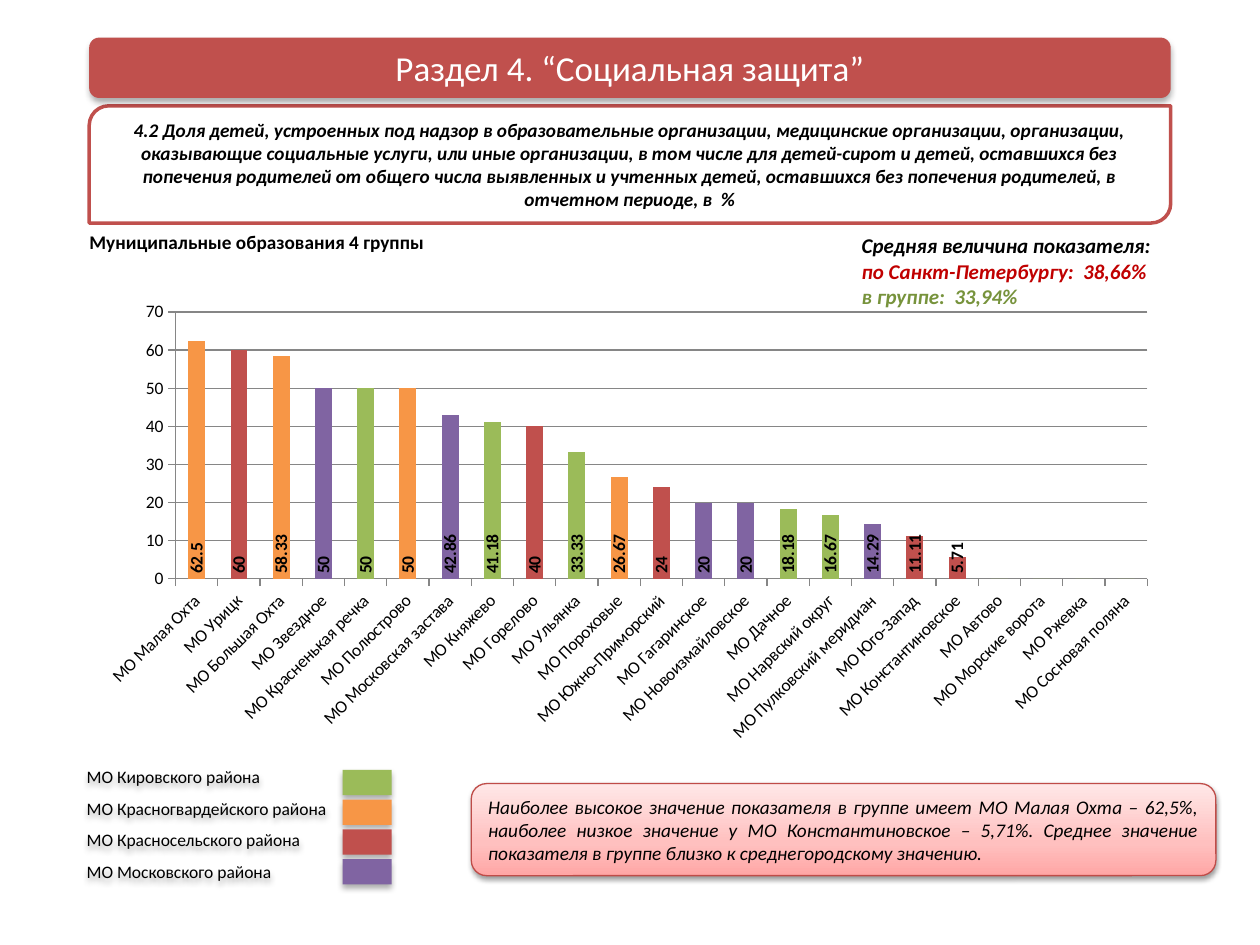
from lxml import etree
from pptx import Presentation
from pptx.chart.data import CategoryChartData
from pptx.dml.color import RGBColor
from pptx.enum import chart as charts, shapes, text
from pptx.oxml import parse_xml
from pptx.oxml.ns import nsdecls, qn
from pptx.util import Pt

BLACK = RGBColor(0, 0, 0)
WHITE = RGBColor(255, 255, 255)
RED = RGBColor(0xC0, 0x50, 0x4D)
GREEN = RGBColor(0x9B, 0xBB, 0x59)
ORANGE = RGBColor(0xF7, 0x96, 0x46)
PURPLE = RGBColor(0x80, 0x64, 0xA2)
EDGE = RGBColor(0xBF, 0x4C, 0x48)
CITY = RGBColor(0xC0, 0, 0)
GROUP = RGBColor(0x77, 0x93, 0x3C)
GREY = RGBColor(0x86, 0x86, 0x86)
PINKS = [(0, "FFA6A5"), (35, "FFC0BF"), (100, "FFE7E7")]

AREAS = [("МО Кировского района", GREEN), ("МО Красногвардейского района", ORANGE),
         ("МО Красносельского района", RED), ("МО Московского района", PURPLE)]
ROWS = [
    ("МО Малая Охта", 62.5, ORANGE), ("МО Урицк", 60, RED),
    ("МО Большая Охта", 58.33, ORANGE), ("МО Звездное", 50, PURPLE),
    ("МО Красненькая речка", 50, GREEN), ("МО Полюстрово", 50, ORANGE),
    ("МО Московская застава", 42.86, PURPLE), ("МО Княжево", 41.18, GREEN),
    ("МО Горелово", 40, RED), ("МО Ульянка", 33.33, GREEN),
    ("МО Пороховые", 26.67, ORANGE), ("МО Южно-Приморский", 24, RED),
    ("МО Гагаринское", 20, PURPLE), ("МО Новоизмайловское", 20, PURPLE),
    ("МО Дачное", 18.18, GREEN), ("МО Нарвский округ", 16.67, GREEN),
    ("МО Пулковский меридиан", 14.29, PURPLE), ("МО Юго-Запад", 11.11, RED),
    ("МО Константиновское", 5.71, RED), ("МО Автово", 0, GREEN),
    ("МО Морские ворота", 0, GREEN), ("МО Ржевка", 0, GREEN),
    ("МО Сосновая поляна", 0, GREEN),
]


def shade(shape, alpha=32, blur=3.5, dist=2.2):
    """Cast a soft shadow straight down; blur and dist are in points."""
    shape.shadow.inherit = False
    shape._element.spPr.find(qn("a:effectLst")).append(parse_xml(
        f'<a:outerShdw {nsdecls("a")} blurRad="{Pt(blur)}" dist="{Pt(dist)}" '
        f'dir="5400000" rotWithShape="0"><a:srgbClr val="000000">'
        f'<a:alpha val="{alpha * 1000}"/></a:srgbClr></a:outerShdw>'))


def blend(shape, stops):
    """Fill with a gradient that runs from the bottom up."""
    shape.fill.gradient()
    grad = shape._element.spPr.find(qn("a:gradFill"))
    marks = "".join(f'<a:gs pos="{pos * 1000}"><a:srgbClr val="{tone}"/></a:gs>'
                    for pos, tone in stops)
    grad.getparent().replace(grad, parse_xml(
        f'<a:gradFill {nsdecls("a")} rotWithShape="1"><a:gsLst>{marks}</a:gsLst>'
        f'<a:lin ang="16200000" scaled="1"/></a:gradFill>'))


def turn(owner, angle):
    """Rotate the text of chart labels by whole degrees."""
    body = owner._element.find(qn("c:txPr")).find(qn("a:bodyPr"))
    body.set("rot", str(angle * 60000))
    body.set("vert", "horz")


def place(chart, x, y, w, h):
    """Fix the inner plot area, in fractions of the chart."""
    area = chart._chartSpace.chart.plotArea
    for old in area.findall(qn("c:layout")):
        area.remove(old)
    parts = "".join(f'<c:{key} val="{val}"/>' for key, val in [
        ("layoutTarget", "inner"), ("xMode", "edge"), ("yMode", "edge"),
        ("x", x), ("y", y), ("w", w), ("h", h)])
    area.insert(0, parse_xml(f'<c:layout {nsdecls("c")}><c:manualLayout>{parts}'
                             f'</c:manualLayout></c:layout>'))


def mute(labels, index):
    """Drop the label of one point."""
    label = etree.Element(qn("c:dLbl"))
    etree.SubElement(label, qn("c:idx")).set("val", str(index))
    etree.SubElement(label, qn("c:delete")).set("val", "1")
    labels._element.insert(0, label)


class Page:
    face = "Calibri"

    def __init__(self, deck):
        self.slide = deck.slides.add_slide(deck.slide_layouts[6])

    def put(self, shape, lines, size, align=text.PP_ALIGN.LEFT, bold=False,
            slant=False, after=0, wrap=True):
        """Lines are pairs of wording and colour, one paragraph each."""
        frame = shape.text_frame
        frame.word_wrap = wrap
        for num, (words, tone) in enumerate(lines):
            para = frame.add_paragraph() if num else frame.paragraphs[0]
            para.alignment = align
            para.space_after = Pt(after)
            run = para.add_run()
            run.text = words
            font = run.font
            font.name, font.size = self.face, Pt(size)
            font.bold, font.italic = bold, slant
            font.color.rgb = tone

    def label(self, box, lines, size, **style):
        shape = self.slide.shapes.add_textbox(*map(Pt, box))
        self.put(shape, lines, size, **style)
        return shape

    def block(self, kind, box, fill, line=None, width=1):
        """Fill is a colour, or a list of gradient stops."""
        shape = self.slide.shapes.add_shape(kind, *map(Pt, box))
        shape.shadow.inherit = False
        if isinstance(fill, list):
            blend(shape, fill)
        else:
            shape.fill.solid()
            shape.fill.fore_color.rgb = fill
        if line is None:
            shape.line.fill.background()
        else:
            shape.line.color.rgb = line
            shape.line.width = Pt(width)
        shape.text_frame.vertical_anchor = text.MSO_ANCHOR.MIDDLE
        return shape

    def bars(self, box, rows):
        data = CategoryChartData()
        data.categories = [name for name, _, _ in rows]
        data.add_series("Series 1", [val for _, val, _ in rows])
        chart = self.slide.shapes.add_chart(
            charts.XL_CHART_TYPE.COLUMN_CLUSTERED, *map(Pt, box), data).chart
        chart.has_legend = chart.has_title = False
        chart.font.name, chart.font.size = self.face, Pt(10)
        chart.font.color.rgb = BLACK
        place(chart, 0.08, 0.04, 0.9, 0.58)

        plot = chart.plots[0]
        plot.vary_by_categories = False
        plot.gap_width = 150
        series = plot.series[0]
        series.format.fill.solid()
        series.format.fill.fore_color.rgb = GREEN
        labels = series.data_labels
        labels.show_value = True
        labels.position = charts.XL_LABEL_POSITION.INSIDE_BASE
        labels.font.bold, labels.font.size = True, Pt(10)
        turn(labels, -90)
        for num, (_, val, tone) in reversed(list(enumerate(rows))):
            if tone != GREEN:
                fill = series.points[num].format.fill
                fill.solid()
                fill.fore_color.rgb = tone
            if not val:
                mute(labels, num)

        cats, vals = chart.category_axis, chart.value_axis
        cats.tick_labels.font.size = Pt(10)
        turn(cats, -45)
        vals.minimum_scale, vals.maximum_scale, vals.major_unit = 0, 70, 10
        vals.has_major_gridlines = True
        for part in (cats, vals, vals.major_gridlines):
            part.format.line.color.rgb = GREY
            part.format.line.width = Pt(0.75)


def main():
    deck = Presentation()
    deck.slide_width, deck.slide_height = Pt(720), Pt(540)
    page = Page(deck)
    kind, align = shapes.MSO_SHAPE, text.PP_ALIGN

    topic = page.block(kind.ROUND_2_DIAG_RECTANGLE, (51, 60.5, 618, 67), WHITE, RED, 2)
    page.put(topic, [("4.2 Доля детей, устроенных под надзор в образовательные организации, медицинские организации, организации, оказывающие социальные услуги, или иные организации, в том числе для детей-сирот и детей, оставшихся без попечения родителей от общего числа выявленных и учтенных детей, оставшихся без попечения родителей, в отчетном периоде, в  %", BLACK)],
             11, align.CENTER, bold=True, slant=True)
    title = page.block(kind.ROUNDED_RECTANGLE, (51, 21.5, 618, 34.5), RED)
    shade(title)
    page.put(title, [("Раздел 4. “Социальная защита”", WHITE)], 20, align.CENTER)

    page.label((44, 128, 230, 21), [("Муниципальные образования 4 группы", BLACK)],
               11, bold=True)
    page.label((485.3, 129.6, 182, 51),
               [("Средняя величина показателя:", BLACK),
                ("по Санкт-Петербургу:  38,66%", CITY),
                ("в группе:  33,94%", GROUP)], 12, bold=True, slant=True, wrap=False)

    key = page.label((42.5, 434.2, 204.5, 74), [(name, BLACK) for name, _ in AREAS],
                     10, after=6)
    shade(key)
    for num, (_, tone) in enumerate(AREAS):
        shade(page.block(kind.RECTANGLE, (195.8, 440 + 17 * num, 28, 14.4), tone))

    note = page.block(kind.ROUNDED_RECTANGLE, (269.3, 447.8, 425.5, 52.6), PINKS, EDGE, 0.75)
    shade(note, 38, 3.1, 1.6)
    page.put(note, [("Наиболее высокое значение показателя в группе имеет МО Малая Охта – 62,5%, наиболее низкое значение у МО Константиновское – 5,71%. Среднее значение показателя в группе близко к среднегородскому значению. ", BLACK)],
             11, align.JUSTIFY, slant=True)

    page.bars((51, 167.8, 617, 262.8), ROWS)
    deck.save("out.pptx")


if __name__ == "__main__":
    main()
